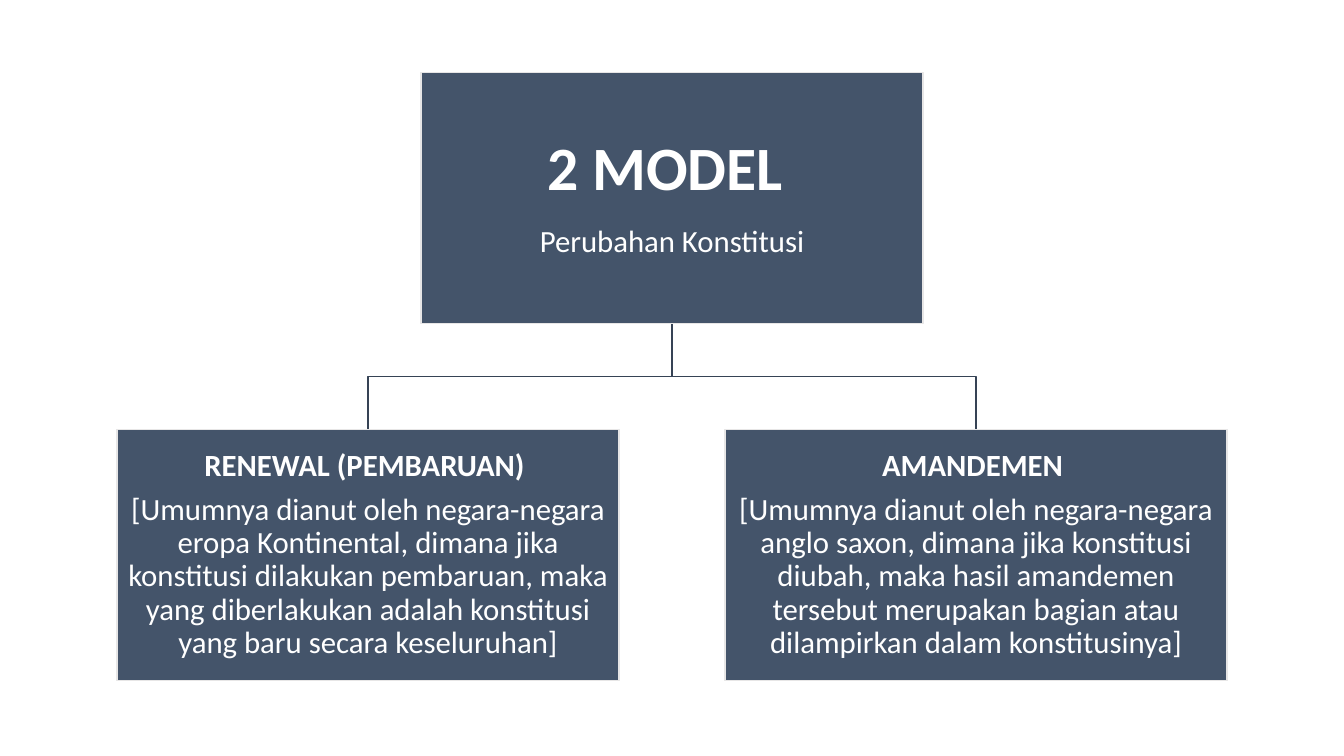
import pptx
import pptx.dml.color
import pptx.enum.shapes
import pptx.enum.text
import pptx.util
from pptx.util import Inches, Pt

# Content: heading, heading size, body
ROOT = ("2 MODEL ", 44, "Perubahan Konstitusi")
MODELS = [
    ("RENEWAL (PEMBARUAN) ", 22,
     "[Umumnya dianut oleh negara-negara eropa Kontinental, dimana jika "
     "konstitusi dilakukan pembaruan, maka yang diberlakukan adalah "
     "konstitusi yang baru secara keseluruhan]"),
    ("AMANDEMEN ", 22,
     "[Umumnya dianut oleh negara-negara anglo saxon, dimana jika "
     "konstitusi diubah, maka hasil amandemen tersebut merupakan bagian "
     "atau dilampirkan dalam konstitusinya]"),
]
BODY_SIZE = 22
FONT = "Calibri"
BOX_FILL, BOX_LINE, BRANCH, WHITE = "44546A", "E7E6E6", "364355", "FFFFFF"

# Layout in inches
SLIDE_W, SLIDE_H = 13.33, 7.5
BOX_W, BOX_H = 4.98, 2.49
ROOT_TOP, MODEL_TOP = 0.72, 4.26
CENTER = 6.665
SPACING = 6.03  # between the centres of the two models


def paint(color, hex_code):
    color.rgb = pptx.dml.color.RGBColor.from_string(hex_code)


def add_branch(s, x):
    bottom = ROOT_TOP + BOX_H
    middle = (bottom + MODEL_TOP) / 2
    fb = s.shapes.build_freeform(Inches(CENTER), Inches(bottom))
    corners = [(CENTER, middle), (x, middle), (x, MODEL_TOP)]
    fb.add_line_segments([(Inches(a), Inches(b)) for a, b in corners], close=False)
    sp = fb.convert_to_shape()
    sp.shadow.inherit = False
    sp.fill.background()
    paint(sp.line.color, BRANCH)
    sp.line.width = Pt(1)


def add_box(s, x, top, content, inset):
    heading, heading_size, body = content
    sp = s.shapes.add_shape(pptx.enum.shapes.MSO_SHAPE.RECTANGLE,
                            Inches(x - BOX_W / 2), Inches(top),
                            Inches(BOX_W), Inches(BOX_H))
    sp.shadow.inherit = False
    sp.fill.solid()
    paint(sp.fill.fore_color, BOX_FILL)
    paint(sp.line.color, BOX_LINE)
    sp.line.width = Pt(1)

    tf = sp.text_frame
    tf.word_wrap = True
    tf.vertical_anchor = pptx.enum.text.MSO_ANCHOR.MIDDLE
    tf.margin_left = tf.margin_right = Inches(inset)
    tf.margin_top = tf.margin_bottom = Inches(inset)
    tf.text = heading + "\n" + body
    for p, size, bold in zip(tf.paragraphs, (heading_size, BODY_SIZE), (True, False)):
        p.alignment = pptx.enum.text.PP_ALIGN.CENTER
        p.line_spacing = 0.9
        p.space_after = Pt(0.35 * size)
        r = p.runs[0]
        r.font.name = FONT
        r.font.size = Pt(size)
        r.font.bold = bold
        paint(r.font.color, WHITE)


def main():
    prs = pptx.Presentation()
    prs.slide_width, prs.slide_height = Inches(SLIDE_W), Inches(SLIDE_H)
    s = prs.slides.add_slide(prs.slide_layouts[6])

    # Branches lie behind the boxes
    centers = [CENTER + (i - 0.5) * SPACING for i in range(len(MODELS))]
    for x in reversed(centers):
        add_branch(s, x)

    # Root and its two models
    add_box(s, CENTER, ROOT_TOP, ROOT, 0.03)
    for x, model in zip(centers, MODELS):
        add_box(s, x, MODEL_TOP, model, 0.02)

    prs.save("out.pptx")


if __name__ == "__main__":
    main()
